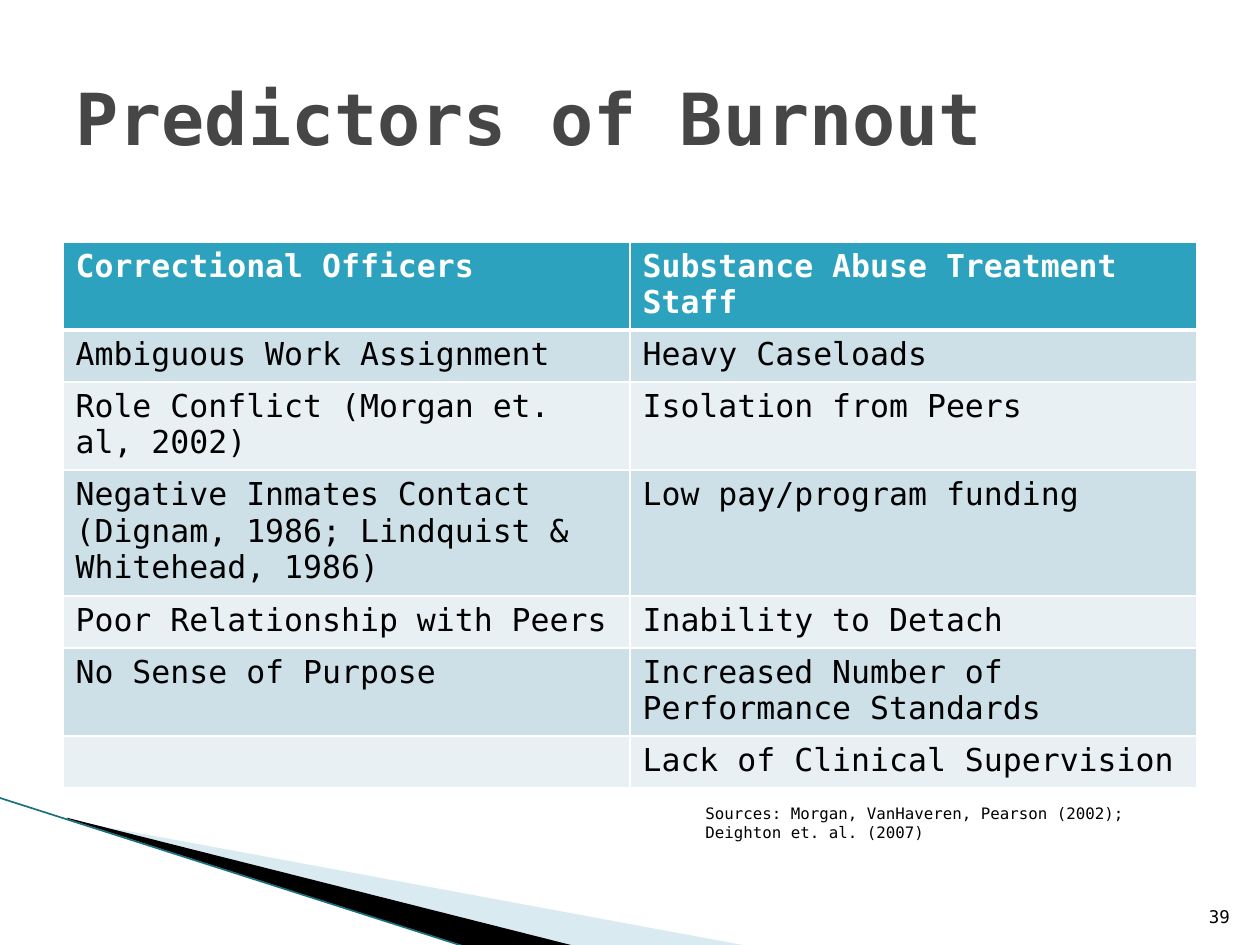
from dataclasses import dataclass

from lxml.etree import SubElement
from pptx import Presentation
from pptx.dml.color import RGBColor
from pptx.enum.shapes import MSO_CONNECTOR
from pptx.enum.text import MSO_ANCHOR as ANCHOR, PP_ALIGN as ALIGN
from pptx.oxml.ns import qn
from pptx.util import Inches, Pt


@dataclass(frozen=True)
class Theme:
    font: str = "DejaVu Sans Mono"
    title: str = "464646"
    ink: str = "000000"
    white: str = "FFFFFF"
    header: str = "2DA2BF"
    bands: tuple = ("CDE0E8", "E8F0F4")
    wedge: str = "A0CBDC"
    edge: str = "1B7080"
    title_size: float = 41
    table_size: float = 18
    source_size: float = 9
    number_size: float = 10


THEME = Theme()
UNIT = 0.5  # inches in one grid step; the slide is 20 columns by 15 rows
COLS, ROWS = 20, 15

PREDICTORS = [
    ("Correctional Officers", "Substance Abuse Treatment Staff"),
    ("Ambiguous Work Assignment", "Heavy Caseloads"),
    ("Role Conflict (Morgan et. al, 2002)", "Isolation from Peers"),
    ("Negative Inmates Contact (Dignam, 1986; Lindquist & Whitehead, 1986)",
     "Low pay/program funding"),
    ("Poor Relationship with Peers", "Inability to Detach"),
    ("No Sense of Purpose", "Increased Number of Performance Standards"),
    ("", "Lack of Clinical Supervision"),
]


def grid(*steps):
    return [Inches(n * UNIT) for n in steps]


def rgb(color):
    return RGBColor.from_string(color)


def style(tf, size, color, bold=False, align=ALIGN.LEFT):
    for p in tf.paragraphs:
        p.alignment = align
        p.font.size = Pt(size)
        for r in p.runs:
            r.font.name = THEME.font
            r.font.size = Pt(size)
            r.font.bold = bold
            r.font.color.rgb = rgb(color)


def add_text(s, box, text, size, color, anchor=ANCHOR.TOP, **look):
    tf = s.shapes.add_textbox(*grid(*box)).text_frame
    tf.word_wrap = True
    tf.vertical_anchor = anchor
    tf.text = text
    style(tf, size, color, **look)


def add_wedge(s, points, color, opacity=100):
    start, *rest = [grid(*point) for point in points]
    builder = s.shapes.build_freeform(*start)
    builder.add_line_segments(rest, close=True)
    sp = builder.convert_to_shape()
    sp.shadow.inherit = False
    sp.fill.solid()
    sp.fill.fore_color.rgb = rgb(color)
    sp.line.fill.background()
    if opacity < 100:
        clr = sp.fill._xPr.find(qn("a:solidFill"))[0]
        SubElement(clr, qn("a:alpha"), val=str(opacity * 1000))


def add_edge(s, start, end):
    line = s.shapes.add_connector(MSO_CONNECTOR.STRAIGHT, *grid(*start, *end))
    line.line.color.rgb = rgb(THEME.edge)
    line.line.width = Pt(0.95)
    SubElement(line._element.spPr, qn("a:effectLst"))


def set_borders(cell, **widths):
    """Draw white borders; widths in points are keyed L, R, T and B."""
    tcPr = cell._tc.get_or_add_tcPr()
    for side, width in widths.items():
        ln = SubElement(tcPr, qn(f"a:ln{side}"), w=str(Pt(width)))
        fill = SubElement(ln, qn("a:solidFill"))
        SubElement(fill, qn("a:srgbClr"), val=THEME.white)


def add_banded_table(s, box, rows, row_steps):
    table = s.shapes.add_table(len(rows), len(rows[0]), *grid(*box)).table
    for i, texts in enumerate(rows):
        table.rows[i].height = Inches(row_steps * UNIT)
        head = i == 0
        for j, text in enumerate(texts):
            cell = table.cell(i, j)
            set_borders(cell, L=1, R=1, T=3 if i == 1 else 1, B=3 if head else 1)
            cell.fill.solid()
            cell.fill.fore_color.rgb = rgb(
                THEME.header if head else THEME.bands[(i - 1) % 2])
            cell.text_frame.text = text
            style(cell.text_frame, THEME.table_size,
                  THEME.white if head else THEME.ink, bold=head)


def add_corner(s):
    add_wedge(s, [(1.1, 13.02), (11.9, 15.02), (9.12, 15.02), (1.1, 13)],
              THEME.wedge, opacity=40)
    add_wedge(s, [(1.06, 12.98), (9.14, 15.02), (7.44, 15.04), (1.08, 13)],
              THEME.ink)
    add_edge(s, (-0.02, 12.66), (7.42, 15.04))


def main():
    prs = Presentation()
    prs.slide_width, prs.slide_height = grid(COLS, ROWS)
    s = prs.slides.add_slide(prs.slide_layouts[6])
    add_corner(s)
    add_text(s, (1, 0.6, 18, 2.5), "Predictors of Burnout",
             THEME.title_size, THEME.title, anchor=ANCHOR.MIDDLE, bold=True)
    add_banded_table(s, (1, 3.84, 18, 7.46), PREDICTORS, row_steps=0.82)
    add_text(s, (11, 12.66, 8.06, 0.8),
             "Sources: Morgan, VanHaveren, Pearson (2002);\nDeighton et. al. (2007)",
             THEME.source_size, THEME.ink)
    add_text(s, (18.92, 14.02, 0.8, 0.8), "39", THEME.number_size, THEME.ink,
             anchor=ANCHOR.BOTTOM, align=ALIGN.RIGHT)
    prs.save("out.pptx")


if __name__ == "__main__":
    main()
